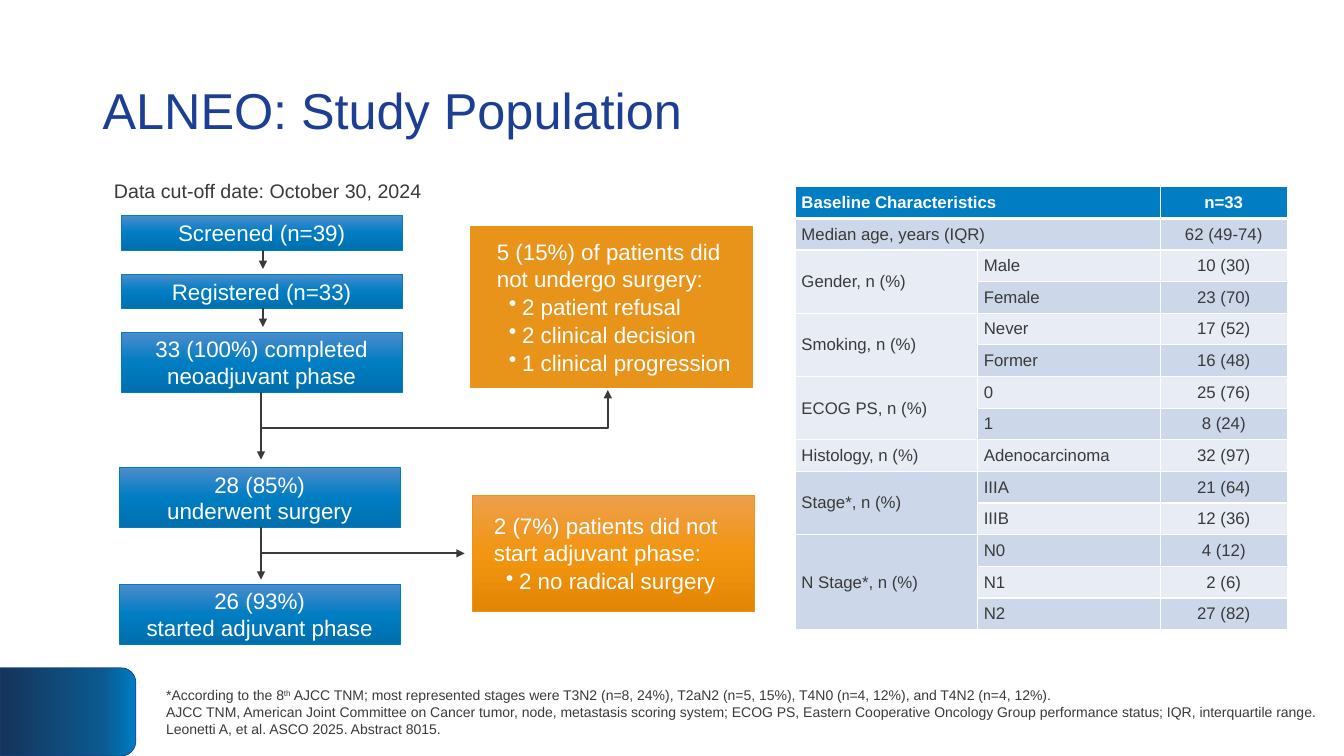
from dataclasses import dataclass
from lxml.etree import SubElement as Sub
from pptx import Presentation
from pptx.dml.color import RGBColor as RGB
from pptx.enum.shapes import MSO_CONNECTOR as Link, MSO_SHAPE as Form
from pptx.enum.text import MSO_ANCHOR as Anchor, PP_ALIGN as Align
from pptx.oxml.ns import qn
from pptx.util import Pt


@dataclass(frozen=True)
class Theme:
    face: str = "Arial"
    title: str = "1C3F93"
    ink: str = "3A3A3A"
    white: str = "FFFFFF"
    blue: str = "007DC3"
    orange: str = "E8931A"
    bands: tuple = ("E7ECF5", "CCD7E9")
    blues: tuple = ((0, "4B8CCB"), (50, "007DC3"), (100, "006FAD"))
    oranges: tuple = ((0, "ED9F4E"), (50, "F29510"), (100, "E38603"))
    navy: tuple = ((0, "007DC3"), (25, "0B598F"), (100, "15345A"))
    head: int = 36
    body: int = 16
    label: int = 14
    cell: int = 12
    note: int = 10


T = Theme()

# Text, top, height, left and the gap kept above the box by its arrow
STEPS = [
    ("Screened (n=39)", 29.5, 24.5, 12.4, 0),
    ("Registered (n=33)", 71.2, 24.5, 12.4, 3.6),
    ("33 (100%) completed neoadjuvant phase", 113, 42.5, 12.4, 4),
    ("28 (85%)\nunderwent surgery", 209.5, 42.5, 11, 5.8),
    ("26 (93%)\nstarted adjuvant phase", 293, 42.5, 11, 3.6),
]
GROUPS = [
    ("Gender, n (%)", [("Male", "10 (30)"), ("Female", "23 (70)")]),
    ("Smoking, n (%)", [("Never", "17 (52)"), ("Former", "16 (48)")]),
    ("ECOG PS, n (%)", [("0", "25 (76)"), ("1", "8 (24)")]),
    ("Histology, n (%)", [("Adenocarcinoma", "32 (97)")]),
    ("Stage*, n (%)", [("IIIA", "21 (64)"), ("IIIB", "12 (36)")]),
    ("N Stage*, n (%)", [("N0", "4 (12)"), ("N1", "2 (6)"), ("N2", "27 (82)")]),
]
NOTES = [
    "*According to the 8^th^ AJCC TNM; most represented stages were T3N2 (n=8, 24%), "
    "T2aN2 (n=5, 15%), T4N0 (n=4, 12%), and T4N2 (n=4, 12%).",
    "AJCC TNM, American Joint Committee on Cancer tumor, node, metastasis scoring system; "
    "ECOG PS, Eastern Cooperative Oncology Group performance status; IQR, interquartile range.\n"
    "Leonetti A, et al. ASCO 2025. Abstract 8015.",
]


def write(frame, paras, size, color=T.ink, bold=False, align=Align.LEFT,
          anchor=Anchor.MIDDLE, gap=0, lines=None, pad=None):
    """Fill a text frame; "• " starts a bullet and ^...^ is superscript."""
    frame.word_wrap = True
    frame.vertical_anchor = anchor
    if pad is not None:
        frame.margin_left = Pt(pad)
        frame.margin_right = frame.margin_top = frame.margin_bottom = 0
    for i, text in enumerate(paras):
        para = frame.add_paragraph() if i else frame.paragraphs[0]
        if text.startswith("• "):
            text = text[2:]
            props = para._p.get_or_add_pPr()
            props.set("marL", str(Pt(18)))
            props.set("indent", str(Pt(-9.4)))
            tint = Sub(props, qn("a:buClr"))
            Sub(tint, qn("a:srgbClr"), val=color)
            Sub(props, qn("a:buChar"), char="•")
        para.alignment = align
        if lines:
            para.line_spacing = lines
        if i and gap:
            para.space_before = Pt(gap)
        for j, line in enumerate(text.split("\n")):
            if j:
                para.add_line_break()
            for k, part in enumerate(line.split("^")):
                run = para.add_run()
                run.text = part
                font = run.font
                font.name, font.size, font.bold = T.face, Pt(size), bold
                font.color.rgb = RGB.from_string(color)
                if k % 2:
                    run._r.get_or_add_rPr().set("baseline", "30000")


def label(slide, box, paras, size, **fmt):
    write(slide.shapes.add_textbox(*map(Pt, box)).text_frame, paras, size, **fmt)


def block(slide, box, fill, edge, form=Form.RECTANGLE):
    """Add a thin-edged shape; fill is a colour or a list of gradient stops."""
    shape = slide.shapes.add_shape(form, *map(Pt, box))
    shape.shadow.inherit = False
    shape.line.color.rgb = RGB.from_string(edge)
    shape.line.width = Pt(0.5)
    if isinstance(fill, str):
        shape.fill.solid()
        shape.fill.fore_color.rgb = RGB.from_string(fill)
        return shape
    shape.fill.gradient()
    grad = shape.element.spPr.find(qn("a:gradFill"))
    stops = grad.find(qn("a:gsLst"))
    for stop in list(stops):
        stops.remove(stop)
    for pos, color in fill:
        stop = Sub(stops, qn("a:gs"), pos=str(pos * 1000))
        Sub(stop, qn("a:srgbClr"), val=color)
    grad.find(qn("a:lin")).set("ang", "5400000")
    return shape


def arrow(slide, start, end, bent=False):
    kind = Link.ELBOW if bent else Link.STRAIGHT
    link = slide.shapes.add_connector(kind, *map(Pt, start + end))
    link.line.color.rgb = RGB.from_string(T.ink)
    link.line.width = Pt(1.5)
    props = link.element.spPr
    if bent:
        props.find(qn("a:prstGeom")).set("prst", "bentConnector2")
    Sub(props.find(qn("a:ln")), qn("a:tailEnd"), type="triangle")
    Sub(props, qn("a:effectLst"))


def flow(slide, x, y):
    """Patient flow: steps down the left, drop-outs on the right."""
    label(slide, (x, y, 234.7, 24.5), ["Data cut-off date: October 30, 2024"],
          T.label, align=Align.CENTER, anchor=Anchor.TOP)
    wide, base = 200.9, None
    for text, top, high, left, gap in STEPS:
        step = block(slide, (x + left, y + top, wide, high), T.blues, T.blue)
        write(step.text_frame, [text], T.body, color=T.white,
              align=Align.CENTER, pad=0)
        if base:
            mid = x + left + wide / 2 + 1
            arrow(slide, (mid, y + base), (mid, y + top - gap))
        base = top + high
    drops = [
        (262.2, 37.4, 114.5, T.orange, 18.7,
         ["5 (15%) of patients did not undergo surgery:", "• 2 patient refusal",
          "• 2 clinical decision", "• 1 clinical progression"]),
        (263.7, 228.9, 83.5, T.oranges, 15.1,
         ["2 (7%) patients did not start adjuvant phase:", "• 2 no radical surgery"]),
    ]
    for left, top, high, fill, pad, paras in drops:
        drop = block(slide, (x + left, y + top, wide, high), fill, T.orange)
        write(drop.text_frame, paras, T.body, color=T.white, gap=0.8, pad=pad)
    arrow(slide, (x + 113.2, y + 181.4), (x + 360.2, y + 154), bent=True)
    arrow(slide, (x + 113.2, y + 270.7), (x + 257.9, y + 270.7))


def edge(cell, row):
    props = cell._tc.get_or_add_tcPr()
    for side in "LRTB":
        thick = (row, side) in ((0, "B"), (1, "T"))
        line = Sub(props, qn(f"a:ln{side}"), w=str(Pt(3 if thick else 1)))
        Sub(Sub(line, qn("a:solidFill")), qn("a:srgbClr"), val=T.white)


def chart(slide, x, y):
    """Table of baseline characteristics."""
    rows = [("Baseline Characteristics", "", "n=33"),
            ("Median age, years (IQR)", "", "62 (49-74)")]
    spans = [(0, 0, 0, 1), (1, 0, 1, 1)]
    for name, items in GROUPS:
        first = len(rows)
        rows += [("" if i else name, *item) for i, item in enumerate(items)]
        if len(items) > 1:
            spans.append((first, 0, len(rows) - 1, 0))
    wide, high = (130.3, 130.3, 90.7), 22.6
    grid = slide.shapes.add_table(len(rows), len(wide), Pt(x), Pt(y),
                                  Pt(sum(wide)), Pt(high * len(rows))).table
    for col, size in zip(grid.columns, wide):
        col.width = Pt(size)
    for r, c, r2, c2 in spans:
        grid.cell(r, c).merge(grid.cell(r2, c2))
    for r, row in enumerate(rows):
        grid.rows[r].height = Pt(high)
        for c, text in enumerate(row):
            cell = grid.cell(r, c)
            cell.margin_left = cell.margin_right = Pt(4.3)
            cell.margin_top = cell.margin_bottom = Pt(2.2)
            edge(cell, r)
            cell.fill.solid()
            cell.fill.fore_color.rgb = RGB.from_string(T.bands[r % 2] if r else T.blue)
            if not cell.is_spanned:
                write(cell.text_frame, [text], T.cell, bold=r == 0,
                      color=T.ink if r else T.white,
                      align=Align.CENTER if c == 2 else Align.LEFT)
                cell.vertical_anchor = Anchor.MIDDLE


def foot(slide, x, y):
    """Corner tab and notes; the tab is a tall shape turned on its side."""
    wide, high = 97, 63
    shift = (wide - high) / 2
    tab = block(slide, (x + shift, y - shift, high, wide), T.navy, T.title,
                Form.ROUND_2_SAME_RECTANGLE)
    tab.rotation = 90
    label(slide, (x + 111.6, y, 848.2, 63), NOTES, T.note)


def main():
    deck = Presentation()
    deck.slide_width, deck.slide_height = Pt(960), Pt(540)
    slide = deck.slides.add_slide(deck.slide_layouts[6])
    label(slide, (66.2, 28.8, 828, 104.4), ["ALNEO: Study Population"],
          T.head, color=T.title, lines=0.9)
    flow(slide, 74, 124.6)
    chart(slide, 568.2, 133.4)
    foot(slide, 0, 477)
    deck.save("out.pptx")


if __name__ == "__main__":
    main()
